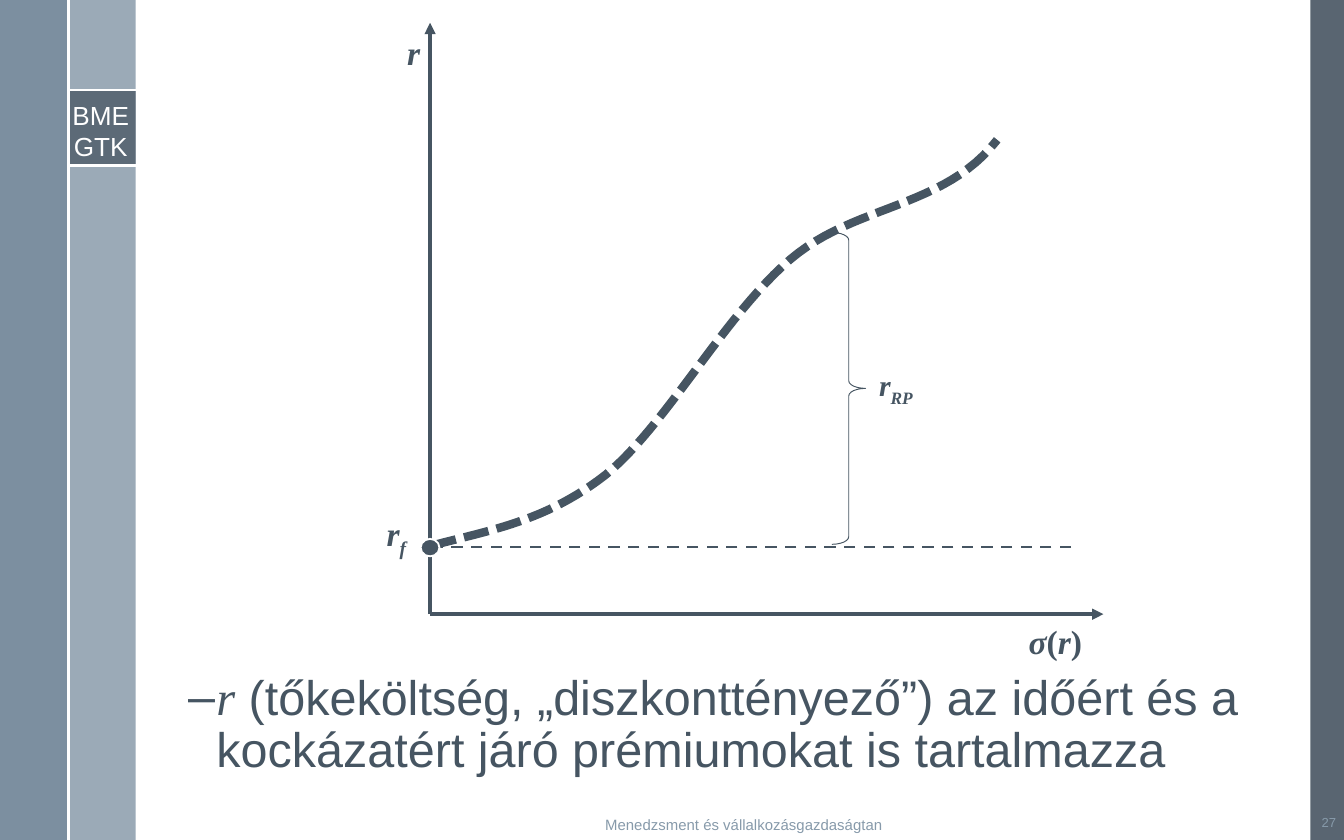
from lxml import etree
from pptx import Presentation
from pptx.dml.color import RGBColor
from pptx.enum.dml import MSO_LINE
from pptx.enum.shapes import MSO_CONNECTOR, MSO_SHAPE
from pptx.enum.text import MSO_ANCHOR, PP_ALIGN
from pptx.oxml.ns import qn
from pptx.util import Inches, Pt

INK = RGBColor(0x46, 0x55, 0x62)
SLATE = RGBColor(0x47, 0x55, 0x62)
STEEL = RGBColor(0x6A, 0x80, 0x93)
MIST = RGBColor(0x9B, 0xAA, 0xB7)
GREY = RGBColor(0x87, 0x9A, 0xAA)
WHITE = RGBColor(0xFF, 0xFF, 0xFF)

RECT, OVAL, BRACE = MSO_SHAPE.RECTANGLE, MSO_SHAPE.OVAL, MSO_SHAPE.RIGHT_BRACE
STRAIGHT = MSO_CONNECTOR.STRAIGHT
DASH, SHORT = MSO_LINE.DASH, MSO_LINE.SQUARE_DOT
TOP, MIDDLE = MSO_ANCHOR.TOP, MSO_ANCHOR.MIDDLE
LEFT, CENTER, RIGHT = PP_ALIGN.LEFT, PP_ALIGN.CENTER, PP_ALIGN.RIGHT
SANS, SERIF = "Arial", "Times New Roman"
PAD = (0.08, 0.04)


def add_form(slide, kind, x, y, w, h, fill=None, alpha=100):
    form = slide.shapes.add_shape(kind, Inches(x), Inches(y), Inches(w), Inches(h))
    form.shadow.inherit = False
    form.line.fill.background()
    if fill is None:
        form.fill.background()
        return form
    form.fill.solid()
    form.fill.fore_color.rgb = fill
    if alpha < 100:
        color = form.fill._xPr.find(qn("a:solidFill"))[0]
        etree.SubElement(color, qn("a:alpha"), val=str(alpha * 1000))
    return form


def set_line(line, color, width, dash=None):
    line.color.rgb = color
    line.width = Pt(width)
    if dash:
        line.dash_style = dash


def add_line(slide, x1, y1, x2, y2, color, width, dash=None, arrow=False):
    link = slide.shapes.add_connector(
        STRAIGHT, Inches(x1), Inches(y1), Inches(x2), Inches(y2))
    set_line(link.line, color, width, dash)
    if arrow:
        etree.SubElement(link.line._get_or_add_ln(), qn("a:tailEnd"), type="triangle")
    etree.SubElement(link._element.spPr, qn("a:effectLst"))


def style(run, size, color, font, bold=False, italic=False, sub=False):
    run.font.size = Pt(size)
    run.font.color.rgb = color
    run.font.name = font
    run.font.bold = bold
    run.font.italic = italic
    if sub:
        run.font._element.set("baseline", "-25000")


def add_box(slide, x, y, w, h, pad=(0.1, 0.05), anchor=TOP):
    box = slide.shapes.add_textbox(Inches(x), Inches(y), Inches(w), Inches(h))
    frame = box.text_frame
    frame.word_wrap = True
    frame.vertical_anchor = anchor
    frame.margin_left = frame.margin_right = Inches(pad[0])
    frame.margin_top = frame.margin_bottom = Inches(pad[1])
    return frame


def add_text(slide, text, x, y, w, h, size, color, align, pad=PAD, anchor=MIDDLE):
    frame = add_box(slide, x, y, w, h, pad, anchor)
    frame.text = text
    for para in frame.paragraphs:
        para.alignment = align
        for run in para.runs:
            style(run, size, color, SANS)


def add_label(slide, parts, x, y, w, h, size=18):
    """Each part is (text, italic, subscript)."""
    para = add_box(slide, x, y, w, h).paragraphs[0]
    para.alignment = RIGHT
    para.space_before = Pt(2)
    for text, italic, sub in parts:
        run = para.add_run()
        run.text = text
        style(run, size, INK, SERIF, True, italic, sub)


def add_frame(slide, w, h):
    # Side bands
    band = 0.5
    left = 0.51
    add_form(slide, RECT, w - 0.25, 0, 0.25, h, SLATE, 90)
    add_form(slide, RECT, left, 0, band, h, MIST)
    add_form(slide, RECT, 0, 0, band, h, STEEL, 88)
    # Badge between two white rules
    top, low = 0.67, 1.23
    add_form(slide, RECT, left, top, band, low - top, SLATE, 75)
    for y in (top, low):
        add_line(slide, left, y, left + band, y, WHITE, 1.5)
    add_line(slide, left, 0, left, h, WHITE, 1.5)
    add_text(slide, "BME\nGTK", band, top + 0.07, band, 0.47, 14, WHITE,
             CENTER, (0, 0), TOP)
    # Footer and page number
    add_text(slide, "Menedzsment és vállalkozásgazdaságtan",
             2.39, h - 0.19, 6.29, 0.15, 8, GREY, CENTER)
    add_text(slide, "27", w - 0.27, h - 0.23, 0.29, 0.2, 7, GREY, RIGHT)


def add_note(slide, x, y, w, h):
    para = add_box(slide, x, y, w, h, PAD).paragraphs[0]
    para.alignment = LEFT
    para.line_spacing = 0.9
    para.space_before = Pt(4.7)
    props = para._p.get_or_add_pPr()
    props.set("marL", str(Inches(0.39)))
    props.set("indent", str(Inches(-0.21)))
    etree.SubElement(props, qn("a:buFont"), typeface=SANS)
    etree.SubElement(props, qn("a:buChar"), char="–")
    rest = " (tőkeköltség, „diszkonttényező”) az időért és a kockázatért járó prémiumokat is tartalmazza"
    for text, font in (("r", SERIF), (rest, SANS)):
        run = para.add_run()
        run.text = text
        style(run, 26, INK, font, italic=font == SERIF)


def bezier(a, b, c, d, steps=24):
    for i in range(1, steps + 1):
        t = i / steps
        u = 1 - t
        yield tuple(u**3 * p + 3 * u * u * t * q + 3 * u * t * t * r + t**3 * s
                    for p, q, r, s in zip(a, b, c, d))


def add_curve(slide, x, y):
    knots = [(0, 0), (0.45, -0.12), (0.85, -0.18), (1.3, -0.53),
             (1.74, -0.89), (2.18, -1.71), (2.67, -2.13),
             (3.15, -2.54), (3.82, -2.51), (4.21, -3.02)]
    points = [p for i in range(0, 9, 3) for p in bezier(*knots[i:i + 4])]
    path = slide.shapes.build_freeform(Inches(x), Inches(y))
    path.add_line_segments(
        [(Inches(x + dx), Inches(y + dy)) for dx, dy in points], close=False)
    curve = path.convert_to_shape()
    curve.shadow.inherit = False
    curve.fill.background()
    set_line(curve.line, INK, 4.5, SHORT)


def add_graph(slide, x, y, w, h):
    base = y + h
    free = base - 0.5  # level of the risk-free rate
    # Axes
    add_line(slide, x, base, x + w, base, INK, 2, arrow=True)
    add_line(slide, x, base, x, y, INK, 2, arrow=True)
    # Labels
    add_label(slide, [("σ", True, False), ("(", False, False),
                      ("r", True, False), (")", False, False)],
              x + 1.02, base, 3.93, 0.4)
    add_label(slide, [("r", True, False)], x - 0.27, y + 0.02, 0.22, 0.4)
    add_label(slide, [("r", True, False), ("f", True, True)],
              x - 0.45, free - 0.3, 0.37, 0.71)
    add_label(slide, [("r", True, False), ("RP", True, True)],
              x + 3.12, free - 1.39, 0.57, 0.37, 16)
    # Return curve and risk-free level
    add_curve(slide, x + 0.01, free - 0.01)
    add_line(slide, x + 4.77, free, x + 0.01, free, INK, 1.5, DASH)
    dot = add_form(slide, OVAL, x - 0.07, free - 0.06, 0.14, 0.13, INK)
    set_line(dot.line, WHITE, 1)
    # Risk premium brace
    brace = add_form(slide, BRACE, x + 2.99, free - 2.34, 0.25, 2.32)
    brace.adjustments[0] = 0.226
    brace.adjustments[1] = 0.5
    set_line(brace.line, INK, 0.5)


def main():
    deck = Presentation()
    deck.slide_width, deck.slide_height = Inches(10), Inches(6.25)
    slide = deck.slides.add_slide(deck.slide_layouts[6])
    add_frame(slide, 10, 6.25)
    add_note(slide, 1.14, 4.97, 8.5, 1)
    add_graph(slide, 3.2, 0.17, 5.01, 4.4)
    deck.save("out.pptx")


if __name__ == "__main__":
    main()
